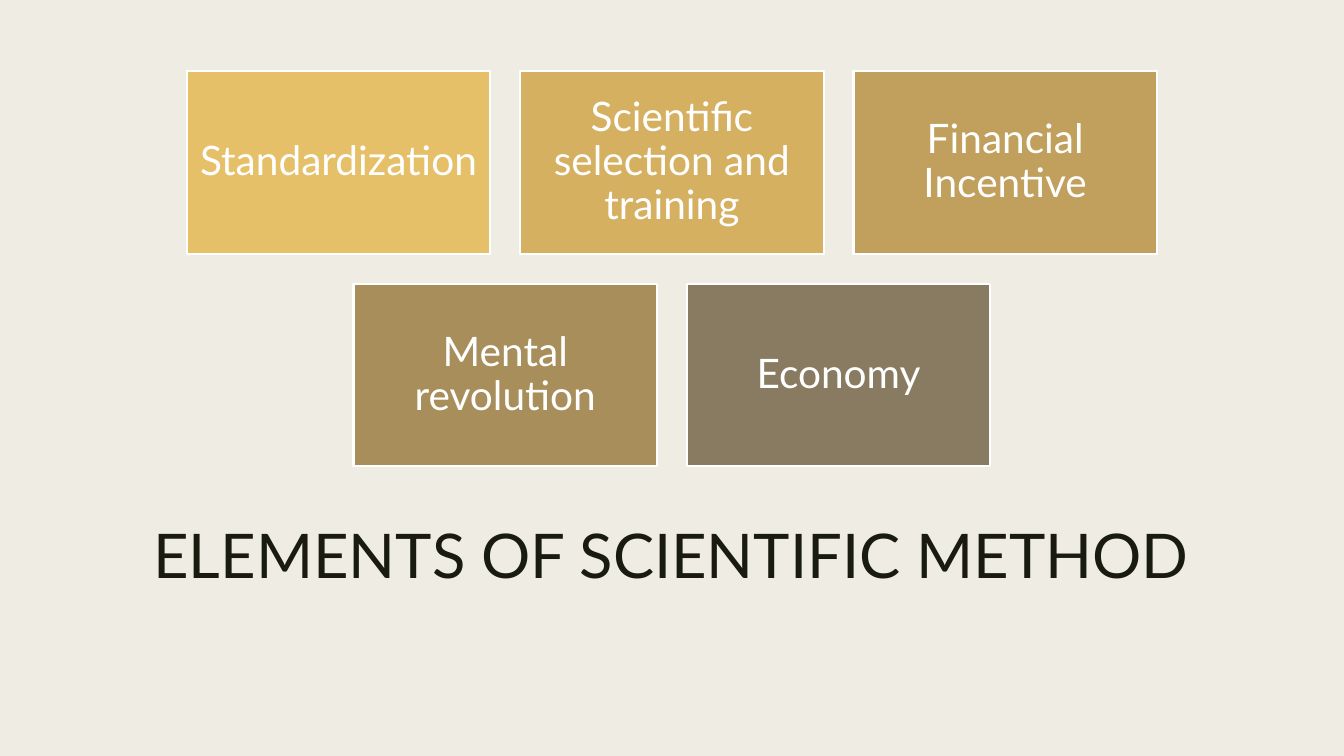
import pptx
import pptx.util
import pptx.dml.color
import pptx.enum.shapes
import pptx.enum.text

COLOURS = {
    "paper": "EFEDE3",
    "ink": "191B0E",
    "white": "FFFFFF",
    "gold": "E6C069",
    "amber": "D5B061",
    "ochre": "C0A05C",
    "bronze": "A88E5B",
    "taupe": "897B61",
}
SLIDE_WIDTH, SLIDE_HEIGHT = 33.87, 19.05
TILE_WIDTH, TILE_HEIGHT, GAP = 7.65, 4.6, 0.75
TILES_TOP = 1.8
ELEMENT_ROWS = [
    [("Standardization", "gold"),
     ("Scientific selection and training", "amber"),
     ("Financial Incentive", "ochre")],
    [("Mental revolution", "bronze"), ("Economy", "taupe")],
]
Cm = pptx.util.Cm


class SlideBuilder:
    """Hold the style and the current slide, and add its elements."""

    font = "Lato"

    def __init__(self, slide):
        self.slide = slide

    def colour(self, name):
        return pptx.dml.color.RGBColor.from_string(COLOURS[name])

    def background(self, name):
        fill = self.slide.background.fill
        fill.solid()
        fill.fore_color.rgb = self.colour(name)

    def add_wording(self, frame, wording, size, colour, spacing):
        frame.word_wrap = True
        frame.auto_size = pptx.enum.text.MSO_AUTO_SIZE.NONE
        paragraph = frame.paragraphs[0]
        paragraph.alignment = pptx.enum.text.PP_ALIGN.CENTER
        paragraph.line_spacing = spacing
        run = paragraph.add_run()
        run.text = wording
        run.font.name = self.font
        run.font.size = pptx.util.Pt(size)
        run.font.color.rgb = self.colour(colour)

    def title(self, wording, left, top, width, height):
        heading = self.slide.shapes.title
        heading.left, heading.top = Cm(left), Cm(top)
        heading.width, heading.height = Cm(width), Cm(height)
        heading.text_frame.vertical_anchor = pptx.enum.text.MSO_ANCHOR.TOP
        self.add_wording(heading.text_frame, wording, 44, "ink", 0.89)

    def tile(self, wording, fill, left, top):
        tile = self.slide.shapes.add_shape(
            pptx.enum.shapes.MSO_SHAPE.RECTANGLE,
            Cm(left), Cm(top), Cm(TILE_WIDTH), Cm(TILE_HEIGHT))
        tile.shadow.inherit = False
        tile.fill.solid()
        tile.fill.fore_color.rgb = self.colour(fill)
        tile.line.color.rgb = self.colour("white")
        tile.line.width = pptx.util.Pt(1.5)
        frame = tile.text_frame
        frame.margin_left = frame.margin_right = Cm(0.28)
        frame.margin_top = frame.margin_bottom = Cm(0.28)
        frame.vertical_anchor = pptx.enum.text.MSO_ANCHOR.MIDDLE
        self.add_wording(frame, wording, 29, "white", 0.9)

    def centred_row(self, elements, top):
        row_width = len(elements) * (TILE_WIDTH + GAP) - GAP
        left = (SLIDE_WIDTH - row_width) / 2
        for column, (wording, fill) in enumerate(elements):
            self.tile(wording, fill, left + column * (TILE_WIDTH + GAP), top)


def main():
    deck = pptx.Presentation()
    deck.slide_width, deck.slide_height = Cm(SLIDE_WIDTH), Cm(SLIDE_HEIGHT)
    builder = SlideBuilder(deck.slides.add_slide(deck.slide_layouts[5]))
    builder.background("paper")
    builder.title("ELEMENTS OF SCIENTIFIC METHOD", 1.78, 13.13, 30.3, 4.11)
    for row, elements in enumerate(ELEMENT_ROWS):
        builder.centred_row(elements, TILES_TOP + row * (TILE_HEIGHT + GAP))
    deck.save("out.pptx")


if __name__ == "__main__":
    main()
